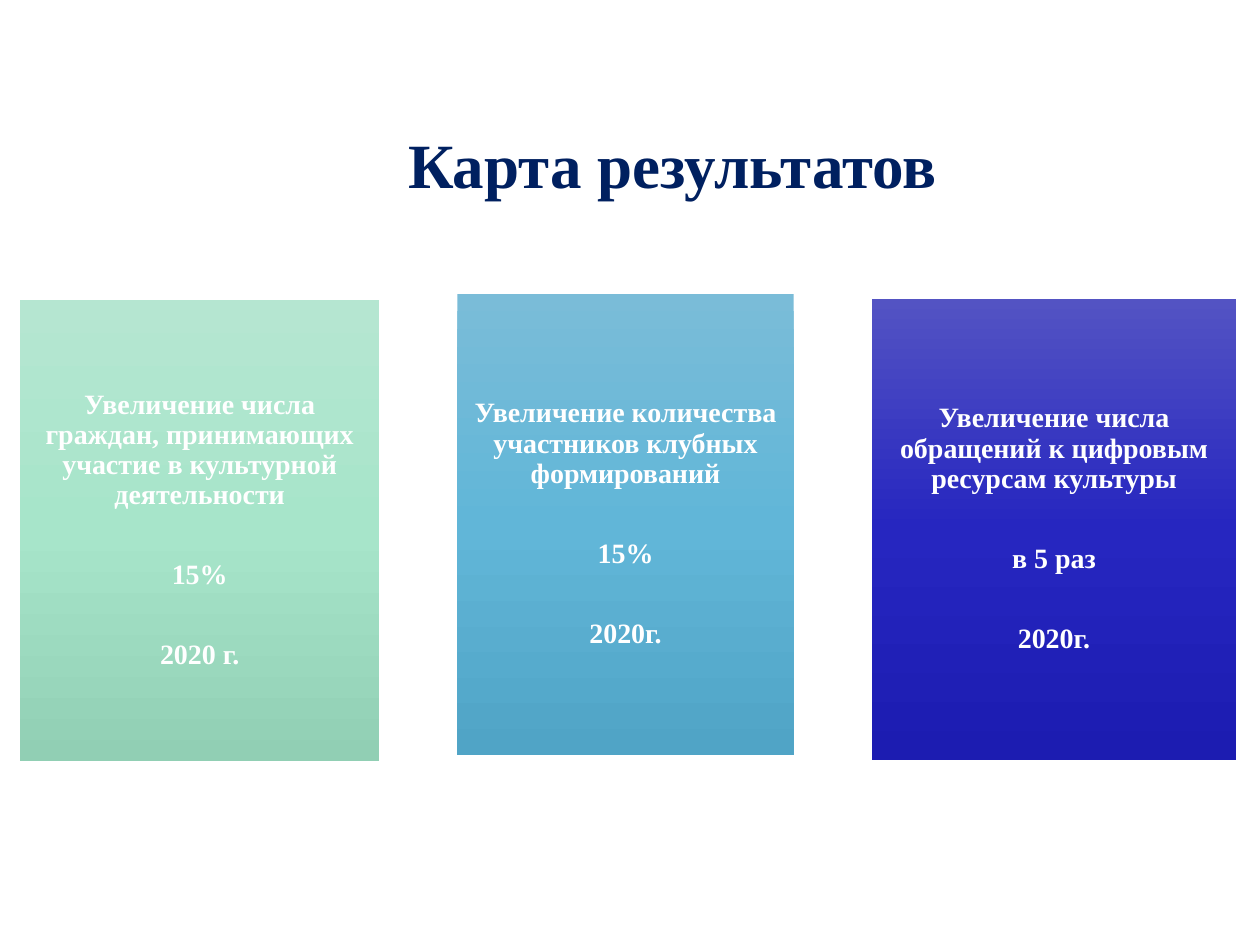
import copy
from dataclasses import dataclass

import pptx
import pptx.dml.color
import pptx.enum.shapes
import pptx.enum.text
import pptx.util

Inches = pptx.util.Inches
Pt = pptx.util.Pt


@dataclass
class Card:
    left: float
    top: float
    width: float
    lines: tuple[str, ...]
    shades: tuple[str, ...]


HEIGHT = 3.66
INSET = 0.07
CARDS = (
    Card(0.16, 2.38, 2.85,
         ("Увеличение числа граждан, принимающих участие в культурной деятельности",
          "15%", "2020 г."),
         ("B5E6D1", "A7E5CA", "91CFB4")),
    Card(3.63, 2.33, 2.67,
         ("Увеличение количества участников клубных формирований",
          "15%", "2020г."),
         ("7ABCD8", "61B6D8", "50A4C6")),
    Card(6.92, 2.37, 2.89,
         ("Увеличение числа обращений к цифровым ресурсам культуры",
          "в 5 раз", "2020г."),
         ("5353C3", "2626C0", "1C1CB1")),
)


def color(code: str) -> pptx.dml.color.RGBColor:
    return pptx.dml.color.RGBColor.from_string(code)


def style(para, size: float, code: str) -> None:
    para.alignment = pptx.enum.text.PP_ALIGN.CENTER
    para.font.name = "Times New Roman"
    para.font.size = Pt(size)
    para.font.bold = True
    para.font.color.rgb = color(code)


def shade(shape, codes: tuple[str, ...]) -> None:
    shape.fill.gradient()
    shape.fill.gradient_angle = 270
    first = shape._element.spPr.xpath("./a:gradFill/a:gsLst/a:gs")[0]
    first.addnext(copy.deepcopy(first))
    for index, (stop, code) in enumerate(zip(shape.fill.gradient_stops, codes)):
        stop.color.rgb = color(code)
        stop.position = index / (len(codes) - 1)


def center(frame) -> None:
    frame.word_wrap = True
    frame.vertical_anchor = pptx.enum.text.MSO_ANCHOR.MIDDLE


def add_title(slide, text: str) -> None:
    box = slide.shapes.add_textbox(
        Inches(1.42), Inches(0.67), Inches(7.83), Inches(1.25))
    center(box.text_frame)
    para = box.text_frame.paragraphs[0]
    para.text = text
    style(para, 36, "002060")


def add_card(slide, card: Card) -> None:
    shape = slide.shapes.add_shape(
        pptx.enum.shapes.MSO_SHAPE.RECTANGLE,
        Inches(card.left), Inches(card.top), Inches(card.width), Inches(HEIGHT))
    shape.shadow.inherit = False
    shape.line.fill.background()
    shade(shape, card.shades)
    frame = shape.text_frame
    center(frame)
    frame.margin_left = frame.margin_right = Inches(INSET)
    frame.margin_top = frame.margin_bottom = Inches(INSET)
    for index, line in enumerate(card.lines):
        para = frame.add_paragraph() if index else frame.paragraphs[0]
        para.text = line
        para.line_spacing = 0.9
        if index:
            para.space_before = Pt(28.5)
        style(para, 16, "FFFFFF")


def main() -> None:
    deck = pptx.Presentation()
    deck.slide_width = Inches(10)
    deck.slide_height = Inches(7.5)
    slide = deck.slides.add_slide(deck.slide_layouts[6])
    add_title(slide, "Карта результатов")
    for card in CARDS:
        add_card(slide, card)
    deck.save("out.pptx")


if __name__ == "__main__":
    main()
